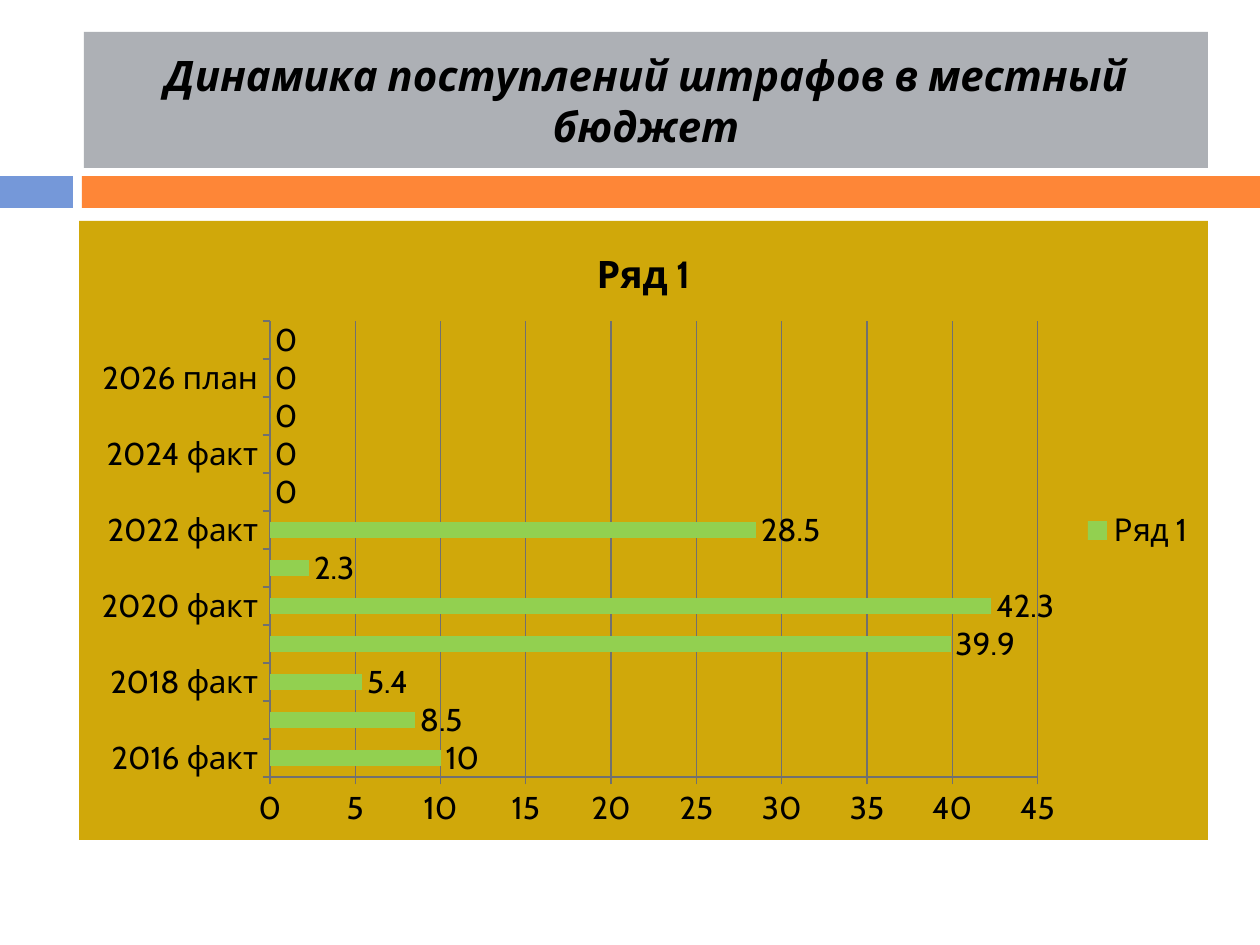
"""Build a slide with a bar chart of fines paid into the local budget."""
from lxml import etree
from pptx import Presentation
from pptx.chart.data import CategoryChartData
from pptx.dml.color import RGBColor
from pptx.enum.chart import XL_CHART_TYPE as ChartType
from pptx.enum.chart import XL_LABEL_POSITION as LabelPosition
from pptx.enum.chart import XL_LEGEND_POSITION as LegendPosition
from pptx.enum.chart import XL_TICK_MARK as TickMark
from pptx.enum.shapes import MSO_SHAPE as Shape
from pptx.enum.text import MSO_ANCHOR as Anchor
from pptx.enum.text import PP_ALIGN as Align
from pptx.oxml import parse_xml
from pptx.util import Pt

BLACK = RGBColor(0x00, 0x00, 0x00)
GRAY = RGBColor(0xAD, 0xB0, 0xB5)
BLUE = RGBColor(0x75, 0x98, 0xD9)
ORANGE = RGBColor(0xFE, 0x86, 0x37)
GOLD = RGBColor(0xD0, 0xA8, 0x0A)
GREEN = RGBColor(0x92, 0xD0, 0x50)
LINE = RGBColor(0x70, 0x70, 0x70)
FONT = "Cabin"
SERIES = "Ряд 1"
FINES = [10, 8.5, 5.4, 39.9, 42.3, 2.3, 28.5, 0, 0, 0, 0, 0]
FIRST_YEAR, FIRST_PLAN_YEAR = 2016, 2025


def px(*lengths):
    return [round(length * 914400 / 126) for length in lengths]


def set_font(font, size, bold=False):
    font.name, font.size, font.bold = FONT, Pt(size), bold
    font.color.rgb = BLACK


deck = Presentation()
deck.slide_width, deck.slide_height = px(1260, 945)
page = deck.slides.add_slide(deck.slide_layouts[5])

for left, width, color in [(0, 73, BLUE), (82, 1178, ORANGE)]:
    band = page.shapes.add_shape(Shape.RECTANGLE, *px(left, 176, width, 32))
    band.shadow.inherit = False
    band.fill.solid()
    band.fill.fore_color.rgb = color
    band.line.fill.background()

title = page.shapes.title
title.left, title.top, title.width, title.height = px(84, 32, 1124, 136)
title.fill.solid()
title.fill.fore_color.rgb = GRAY
title.text_frame.text = "Динамика поступлений штрафов в местный бюджет"
title.text_frame.vertical_anchor = Anchor.MIDDLE
heading = title.text_frame.paragraphs[0]
heading.alignment = Align.CENTER
set_font(heading.font, 24, bold=True)
heading.font.italic = True

data = CategoryChartData()
data.categories = [
    f"{year} {'факт' if year < FIRST_PLAN_YEAR else 'план'}"
    for year in range(FIRST_YEAR, FIRST_YEAR + len(FINES))
]
data.add_series(SERIES, FINES)
chart = page.shapes.add_chart(
    ChartType.BAR_CLUSTERED, *px(79, 221, 1129, 619), data
).chart
set_font(chart.font, 18)

background = parse_xml(
    '<c:spPr xmlns:c="http://schemas.openxmlformats.org/drawingml/2006/chart"'
    ' xmlns:a="http://schemas.openxmlformats.org/drawingml/2006/main">'
    f'<a:solidFill><a:srgbClr val="{GOLD}"/></a:solidFill>'
    "<a:ln><a:noFill/></a:ln></c:spPr>"
)
chart.element.find(etree.QName(background.nsmap["c"], "txPr")).addprevious(background)

chart.has_title = True
chart.chart_title.include_in_layout = False
chart.chart_title.text_frame.text = SERIES
set_font(chart.chart_title.text_frame.paragraphs[0].font, 21.6, bold=True)
chart.has_legend = True
chart.legend.position = LegendPosition.RIGHT
chart.legend.include_in_layout = False

for axis in (chart.category_axis, chart.value_axis):
    axis.major_tick_mark = TickMark.OUTSIDE
    axis.minor_tick_mark = TickMark.NONE
    axis.format.line.color.rgb = LINE
chart.value_axis.has_major_gridlines = True
chart.value_axis.major_gridlines.format.line.color.rgb = LINE

plot = chart.plots[0]
plot.gap_width = 150
plot.vary_by_categories = False
bars = plot.series[0]
bars.format.fill.solid()
bars.format.fill.fore_color.rgb = GREEN
labels = bars.data_labels
labels.show_value = True
labels.position = LabelPosition.OUTSIDE_END
set_font(labels.font, 18)

deck.save("out.pptx")
